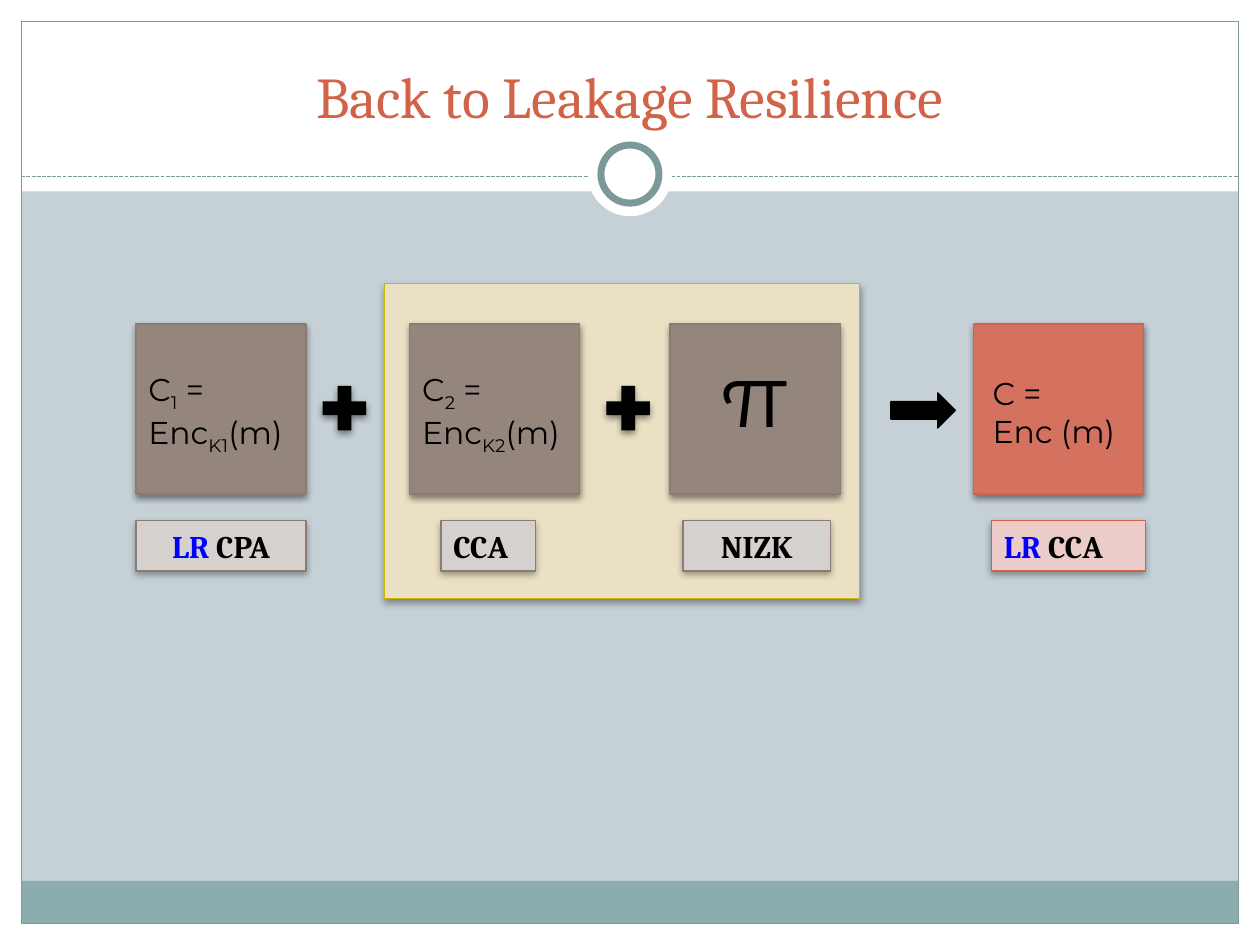
from lxml.etree import SubElement
from pptx import Presentation
from pptx.dml.color import RGBColor
from pptx.enum.dml import MSO_LINE
from pptx.enum.shapes import MSO_CONNECTOR, MSO_SHAPE
from pptx.enum.text import MSO_ANCHOR, PP_ALIGN
from pptx.oxml.ns import qn
from pptx.util import Cm, Pt

BLACK = RGBColor(0x00, 0x00, 0x00)
WHITE = RGBColor(0xFF, 0xFF, 0xFF)
BLUE = RGBColor(0x00, 0x00, 0xFF)
SKY = RGBColor(0xC5, 0xD1, 0xD7)
TEAL = RGBColor(0x8C, 0xAD, 0xAE)
SLATE = RGBColor(0x7C, 0x99, 0x9A)
RUST = RGBColor(0xD1, 0x63, 0x49)
CORAL = RGBColor(0xD4, 0x72, 0x5F)
PINK = RGBColor(0xEC, 0xCC, 0xC9)
BROWN = RGBColor(0x95, 0x86, 0x7D)
BROWN_EDGE = RGBColor(0x8C, 0x7B, 0x70)
PALE = RGBColor(0xD5, 0xD1, 0xCF)
CREAM = RGBColor(0xEA, 0xE1, 0xC5)
GOLD = RGBColor(0xCC, 0xB4, 0x00)
SERIF, SANS = "Cambria", "Montserrat"

# Content
TITLE = "Back to Leakage Resilience"
BOX_COLORS = [(2.74, BROWN, BROWN_EDGE), (8.26, BROWN, BROWN_EDGE),
              (13.51, BROWN, BROWN_EDGE), (19.63, CORAL, RUST)]
PLUS_X = [6.35, 12.07]
# Formulas: place, size, paragraphs of (text, is subscript) runs
FORMULAS = [
    ((2.74, 7.34, 3.94, 1.8), 18,
     [[("C", False), ("1", True), (" = Enc", False), ("K1", True), ("(m)", False)]]),
    ((8.26, 7.34, 3.94, 1.8), 18,
     [[("C", False), ("2", True), (" = Enc", False), ("K2", True), ("(m)", False)]]),
    ((14.35, 6.73, 3.43, 2.39), 50, [[("π", False)]]),
    ((19.76, 7.42, 3.94, 1.8), 18, [[("C =", False)], [("Enc (m)", False)]]),
]
# Labels: left, width, fill, edge, alignment, (text, colour) runs
LABELS = [
    (2.74, 3.43, PALE, BROWN_EDGE, PP_ALIGN.CENTER, [("LR ", BLUE), ("CPA", BLACK)]),
    (8.89, 1.9, PALE, BROWN_EDGE, PP_ALIGN.LEFT, [("CCA", BLACK)]),
    (13.77, 2.97, PALE, BROWN_EDGE, PP_ALIGN.CENTER, [("NIZK", BLACK)]),
    (19.99, 3.1, PINK, RUST, PP_ALIGN.LEFT, [("LR ", BLUE), ("CCA", BLACK)]),
]

# Layout in centimetres
W, H = 25.4, 19.05
MARGIN = 0.43
INNER_W, INNER_H = W - 2 * MARGIN, H - 2 * MARGIN
HEADER_H, RULE_Y, RING_Y = 3.86, 3.56, 3.51
FOOTER_H = 0.86
BOX_Y, BOX_SIZE = 6.53, 3.43
LABEL_Y, LABEL_H = 10.49, 1.02


def add_shape(kind, place, fill=None, line=None, width=0.75, shadow=0):
    """Add a preset shape; shadow is its opacity in percent."""
    sp = slide.shapes.add_shape(kind, *map(Cm, place))
    sp.shadow.inherit = False
    if fill is None:
        sp.fill.background()
    else:
        sp.fill.solid()
        sp.fill.fore_color.rgb = fill
    if line is None:
        sp.line.fill.background()
    else:
        sp.line.color.rgb = line
        sp.line.width = Pt(width)
    if shadow:
        effects = sp._element.spPr.find(qn("a:effectLst"))
        outer = SubElement(effects, qn("a:outerShdw"), blurRad=str(Pt(4)),
                           dist=str(Pt(2)), dir="5400000", rotWithShape="0")
        color = SubElement(outer, qn("a:srgbClr"), val="000000")
        SubElement(color, qn("a:alpha"), val=str(shadow * 1000))
    return sp


def add_run(p, text, font, size, color, bold=False):
    r = p.add_run()
    r.text = text
    r.font.name, r.font.size, r.font.bold = font, Pt(size), bold
    r.font.color.rgb = color
    return r


prs = Presentation()
prs.slide_width, prs.slide_height = Cm(W), Cm(H)
slide = prs.slides.add_slide(prs.slide_layouts[5])
slide.background.fill.solid()
slide.background.fill.fore_color.rgb = SKY

# White border, header and footer
for place in [(0, H - MARGIN, W, MARGIN), (0, 0, W, HEADER_H),
              (0, 0, MARGIN, H), (W - MARGIN, 0, MARGIN, H)]:
    add_shape(MSO_SHAPE.RECTANGLE, place, WHITE)
add_shape(MSO_SHAPE.RECTANGLE,
          (MARGIN, H - MARGIN - FOOTER_H, INNER_W, FOOTER_H), TEAL)
add_shape(MSO_SHAPE.RECTANGLE, (MARGIN, MARGIN, INNER_W, INNER_H), line=SLATE)

# Dashed rule with a ring in the middle
rule = slide.shapes.add_connector(MSO_CONNECTOR.STRAIGHT, Cm(MARGIN), Cm(RULE_Y),
                                  Cm(W - MARGIN), Cm(RULE_Y))
rule.line.color.rgb = SLATE
rule.line.width = Pt(0.75)
rule.line.dash_style = MSO_LINE.SQUARE_DOT
SubElement(rule._element.spPr, qn("a:effectLst"))
for d, edge in [(1.7, None), (1.17, SLATE)]:
    add_shape(MSO_SHAPE.OVAL, (W / 2 - d / 2, RING_Y - d / 2, d, d), WHITE, edge, 4)

# Title, brought in front of the header
title = slide.shapes.title
title.left, title.top, title.width, title.height = map(Cm, (0.84, 0.64, 23.7, 2.11))
slide.shapes._spTree.append(title._element)
tf = title.text_frame
tf.vertical_anchor = MSO_ANCHOR.BOTTOM
tf.paragraphs[0].alignment = PP_ALIGN.CENTER
add_run(tf.paragraphs[0], TITLE, SERIF, 33, RUST)

# Panel, boxes and operators
add_shape(MSO_SHAPE.RECTANGLE, (7.75, 5.72, 9.58, 6.35), CREAM, GOLD, shadow=35)
for x, fill, edge in BOX_COLORS:
    add_shape(MSO_SHAPE.RECTANGLE, (x, BOX_Y, BOX_SIZE, BOX_SIZE), fill, edge, shadow=45)
add_shape(MSO_SHAPE.RIGHT_ARROW, (17.96, 7.92, 1.3, 0.71), BLACK, BLACK)
for x in PLUS_X:
    add_shape(MSO_SHAPE.MATH_PLUS, (x, 7.62, 1.19, 1.22), BLACK, shadow=45)

# Formulas
for place, size, lines in FORMULAS:
    tf = slide.shapes.add_textbox(*map(Cm, place)).text_frame
    tf.word_wrap = True
    for i, runs in enumerate(lines):
        p = tf.add_paragraph() if i else tf.paragraphs[0]
        for text, is_sub in runs:
            r = add_run(p, text, SANS, size, BLACK)
            if is_sub:
                r.font._element.set("baseline", "-25000")

# Labels under the boxes
for x, width, fill, edge, align, runs in LABELS:
    sp = add_shape(MSO_SHAPE.RECTANGLE, (x, LABEL_Y, width, LABEL_H), fill, edge, shadow=35)
    p = sp.text_frame.paragraphs[0]
    p.alignment = align
    for text, color in runs:
        add_run(p, text, SERIF, 18, color, bold=True)

prs.save("out.pptx")
